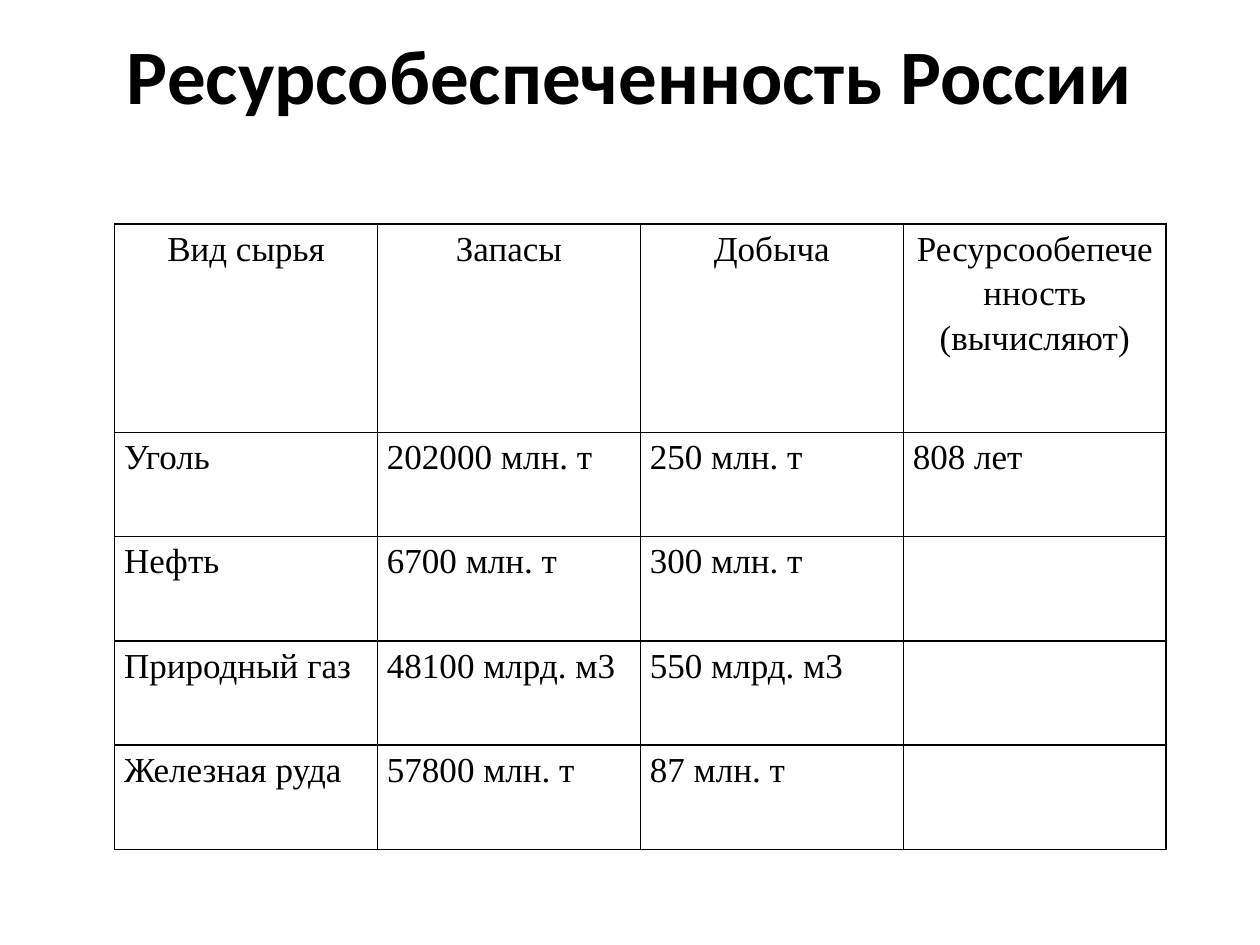
from pptx import Presentation
from pptx.dml.color import RGBColor
from pptx.enum.text import MSO_ANCHOR, PP_ALIGN
from pptx.oxml import parse_xml
from pptx.oxml.ns import nsdecls
from pptx.util import Cm, Pt

BLACK = "000000"


def write(frame, text, *, font, size, align, bold=False, spacing=1.0, color=BLACK):
    paragraph = frame.paragraphs[0]
    paragraph.alignment = align
    paragraph.line_spacing = spacing
    run = paragraph.add_run()
    run.text = text
    run.font.name = font
    run.font.size = Pt(size)
    run.font.bold = bold
    run.font.color.rgb = RGBColor.from_string(color)


def add_borders(cell, color=BLACK, width=Pt(1)):
    properties = cell._tc.get_or_add_tcPr()
    for side in ("lnL", "lnR", "lnT", "lnB"):
        properties.append(parse_xml(
            f'<a:{side} {nsdecls("a")} w="{width}"><a:solidFill>'
            f'<a:srgbClr val="{color}"/></a:solidFill></a:{side}>'))


presentation = Presentation()
presentation.slide_width = Cm(25.4)
presentation.slide_height = Cm(19.05)
slide = presentation.slides.add_slide(presentation.slide_layouts[6])

# Heading
heading = slide.shapes.add_textbox(Cm(1.27), Cm(0.56), Cm(22.86), Cm(3.18)).text_frame
heading.word_wrap = True
heading.vertical_anchor = MSO_ANCHOR.TOP
heading.margin_top = heading.margin_bottom = 0
write(heading, "Ресурсобеспеченность России", font="Calibri", size=44,
      bold=True, align=PP_ALIGN.CENTER)

# Reserves, extraction and years of supply
resources = [
    ("Вид сырья", "Запасы", "Добыча", "Ресурсообепеченность (вычисляют)"),
    ("Уголь", "202000 млн. т", "250 млн. т", "808 лет"),
    ("Нефть", "6700 млн. т", "300 млн. т", ""),
    ("Природный газ", "48100 млрд. м3", "550 млрд. м3", ""),
    ("Железная руда", "57800 млн. т", "87 млн. т", ""),
]
column_width, header_height, row_height = Cm(5.3), Cm(4.2), Cm(2.1)
supply = slide.shapes.add_table(
    len(resources), 4, Cm(2.31), Cm(4.52), 4 * column_width,
    header_height + 4 * row_height).table
supply.first_row = supply.horz_banding = False
for column in supply.columns:
    column.width = column_width

for row_index, values in enumerate(resources):
    is_header = row_index == 0
    supply.rows[row_index].height = header_height if is_header else row_height
    for column_index, value in enumerate(values):
        cell = supply.cell(row_index, column_index)
        cell.margin_left = cell.margin_right = Cm(0.19)
        cell.margin_top = cell.margin_bottom = 0
        add_borders(cell)
        cell.fill.background()
        if value:
            write(cell.text_frame, value, font="Times New Roman", size=20, spacing=1.15,
                  align=PP_ALIGN.CENTER if is_header else PP_ALIGN.JUSTIFY)

presentation.save("out.pptx")
